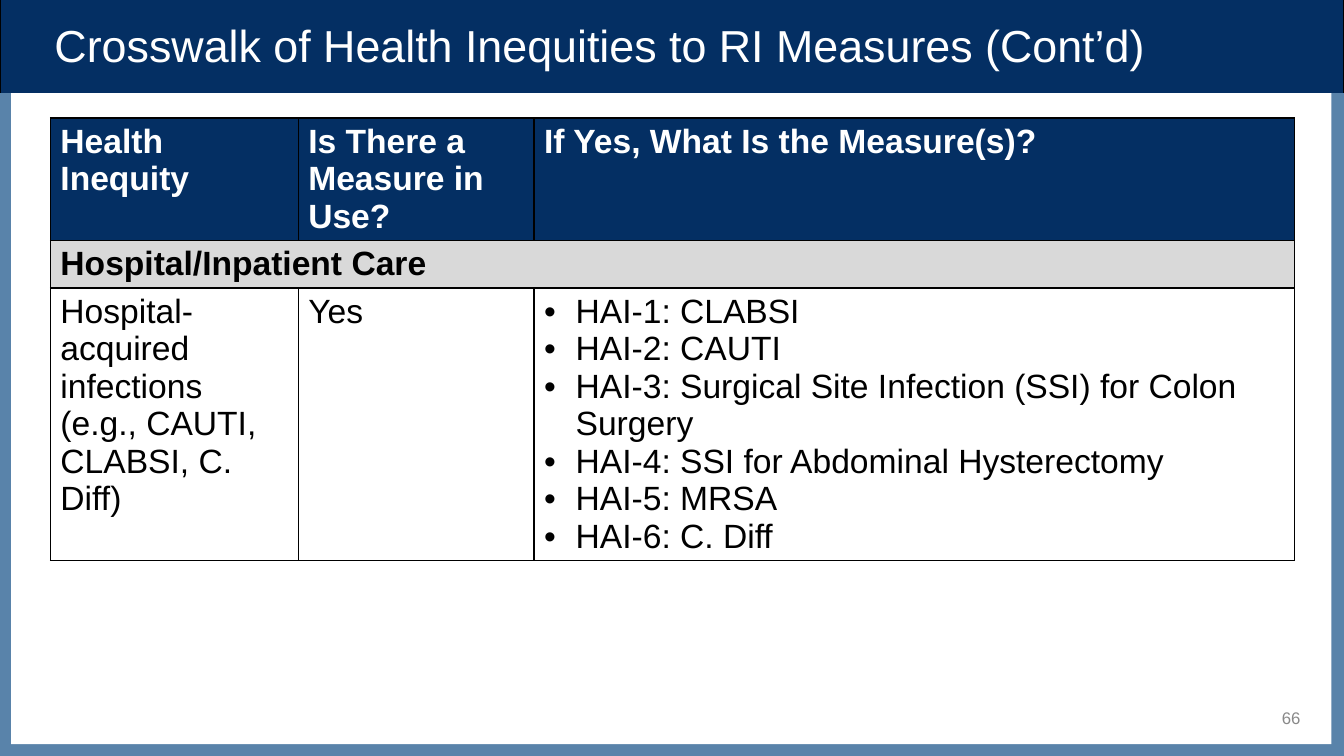
from dataclasses import dataclass
from typing import Optional

from lxml.etree import SubElement
from pptx import Presentation
from pptx.dml.color import RGBColor
from pptx.enum.shapes import MSO_SHAPE as Preset
from pptx.enum.text import MSO_ANCHOR as Anchor, PP_ALIGN as Align
from pptx.oxml.ns import qn
from pptx.util import Pt

COLORS = {
    "navy": "042F63",
    "steel": "5983AA",
    "white": "FFFFFF",
    "black": "000000",
    "band": "D9D9D9",
    "number": "898989",
}
FONT = "Arial"
BULLET_INDENT = Pt(22.5)


@dataclass(frozen=True)
class Panel:
    left: float
    top: float
    width: float
    height: float
    fill: str
    outline: Optional[str] = None


@dataclass(frozen=True)
class Entry:
    lines: tuple[str, ...]
    fill: Optional[str] = None
    color: str = "black"
    bold: bool = False
    bulleted: bool = False


PANELS = (
    Panel(0, 0, 960, 67, "navy", "black"),
    Panel(0, 66.5, 962, 474, "steel"),
    Panel(8, 66.5, 943, 465, "white"),
)
COLUMN_WIDTHS = (177, 168.5, 543)
ROW_HEIGHTS = (87, 34, 194)
HEADINGS = (
    "Health Inequity",
    "Is There a Measure in Use?",
    "If Yes, What Is the Measure(s)?",
)
MEASURES = (
    "CLABSI",
    "CAUTI",
    "Surgical Site Infection (SSI) for Colon Surgery",
    "SSI for Abdominal Hysterectomy",
    "MRSA",
    "C. Diff",
)
CROSSWALK = (
    tuple(Entry((heading,), "navy", "white", True) for heading in HEADINGS),
    (Entry(("Hospital/Inpatient Care",), "band", bold=True),
     Entry((), "band"), Entry((), "band")),
    (
        Entry(("Hospital-acquired infections", "(e.g., CAUTI, CLABSI, C. Diff)")),
        Entry(("Yes",)),
        Entry(tuple(f"HAI-{n}: {name}" for n, name in enumerate(MEASURES, 1)),
              bulleted=True),
    ),
)


def rgb(name: str) -> RGBColor:
    return RGBColor.from_string(COLORS[name])


def add_text(paragraph, text: str, size: float, color: str, bold: bool = False) -> None:
    run = paragraph.add_run()
    run.text = text
    run.font.name = FONT
    run.font.size = Pt(size)
    run.font.bold = bold
    run.font.color.rgb = rgb(color)


def draw_panel(slide, panel: Panel) -> None:
    rect = slide.shapes.add_shape(
        Preset.RECTANGLE, Pt(panel.left), Pt(panel.top), Pt(panel.width), Pt(panel.height))
    rect.shadow.inherit = False
    rect.fill.solid()
    rect.fill.fore_color.rgb = rgb(panel.fill)
    if panel.outline:
        rect.line.color.rgb = rgb(panel.outline)
        rect.line.width = Pt(0.75)
    else:
        rect.line.fill.background()


def add_borders(cell) -> None:
    properties = cell._tc.get_or_add_tcPr()
    for side in ("a:lnL", "a:lnR", "a:lnT", "a:lnB"):
        border = SubElement(properties, qn(side), w=str(Pt(1)))
        solid = SubElement(border, qn("a:solidFill"))
        SubElement(solid, qn("a:srgbClr"), val=COLORS["black"])


def add_bullet(paragraph) -> None:
    properties = paragraph._p.get_or_add_pPr()
    properties.set("marL", str(BULLET_INDENT))
    properties.set("indent", str(-BULLET_INDENT))
    SubElement(properties, qn("a:buFont"), typeface=FONT)
    SubElement(properties, qn("a:buChar"), char="•")


def fill_cell(cell, entry: Entry) -> None:
    add_borders(cell)
    if entry.fill:
        cell.fill.solid()
        cell.fill.fore_color.rgb = rgb(entry.fill)
    else:
        cell.fill.background()
    frame = cell.text_frame
    for index, line in enumerate(entry.lines):
        paragraph = frame.add_paragraph() if index else frame.paragraphs[0]
        if entry.bulleted:
            add_bullet(paragraph)
        add_text(paragraph, line, 24, entry.color, entry.bold)


def draw_crosswalk(slide) -> None:
    table = slide.shapes.add_table(
        len(ROW_HEIGHTS), len(COLUMN_WIDTHS), Pt(36), Pt(84.25),
        Pt(sum(COLUMN_WIDTHS)), Pt(sum(ROW_HEIGHTS))).table
    table.first_row = False
    table.horz_banding = False
    for column, width in zip(table.columns, COLUMN_WIDTHS):
        column.width = Pt(width)
    for row, height, entries in zip(table.rows, ROW_HEIGHTS, CROSSWALK):
        row.height = Pt(height)
        for cell, entry in zip(row.cells, entries):
            fill_cell(cell, entry)
    table.cell(1, 0).merge(table.cell(1, len(COLUMN_WIDTHS) - 1))


def draw_page_number(slide) -> None:
    number = slide.shapes.add_textbox(Pt(880), Pt(504), Pt(56), Pt(18))
    frame = number.text_frame
    frame.word_wrap = True
    frame.vertical_anchor = Anchor.MIDDLE
    frame.paragraphs[0].alignment = Align.RIGHT
    add_text(frame.paragraphs[0], "66", 12, "number")


def draw_title(slide) -> None:
    title = slide.shapes.title
    title.left, title.top = Pt(31.7), Pt(5.75)
    title.width, title.height = Pt(895.7), Pt(52)
    title.text_frame.vertical_anchor = Anchor.MIDDLE
    paragraph = title.text_frame.paragraphs[0]
    paragraph.alignment = Align.LEFT
    add_text(paragraph, "Crosswalk of Health Inequities to RI Measures (Cont’d)", 32, "white")
    title.element.getparent().append(title.element)


def main() -> None:
    deck = Presentation()
    deck.slide_width, deck.slide_height = Pt(960), Pt(540)
    slide = deck.slides.add_slide(deck.slide_layouts.get_by_name("Title Only"))
    for panel in PANELS:
        draw_panel(slide, panel)
    draw_crosswalk(slide)
    draw_page_number(slide)
    draw_title(slide)
    deck.save("out.pptx")


if __name__ == "__main__":
    main()
